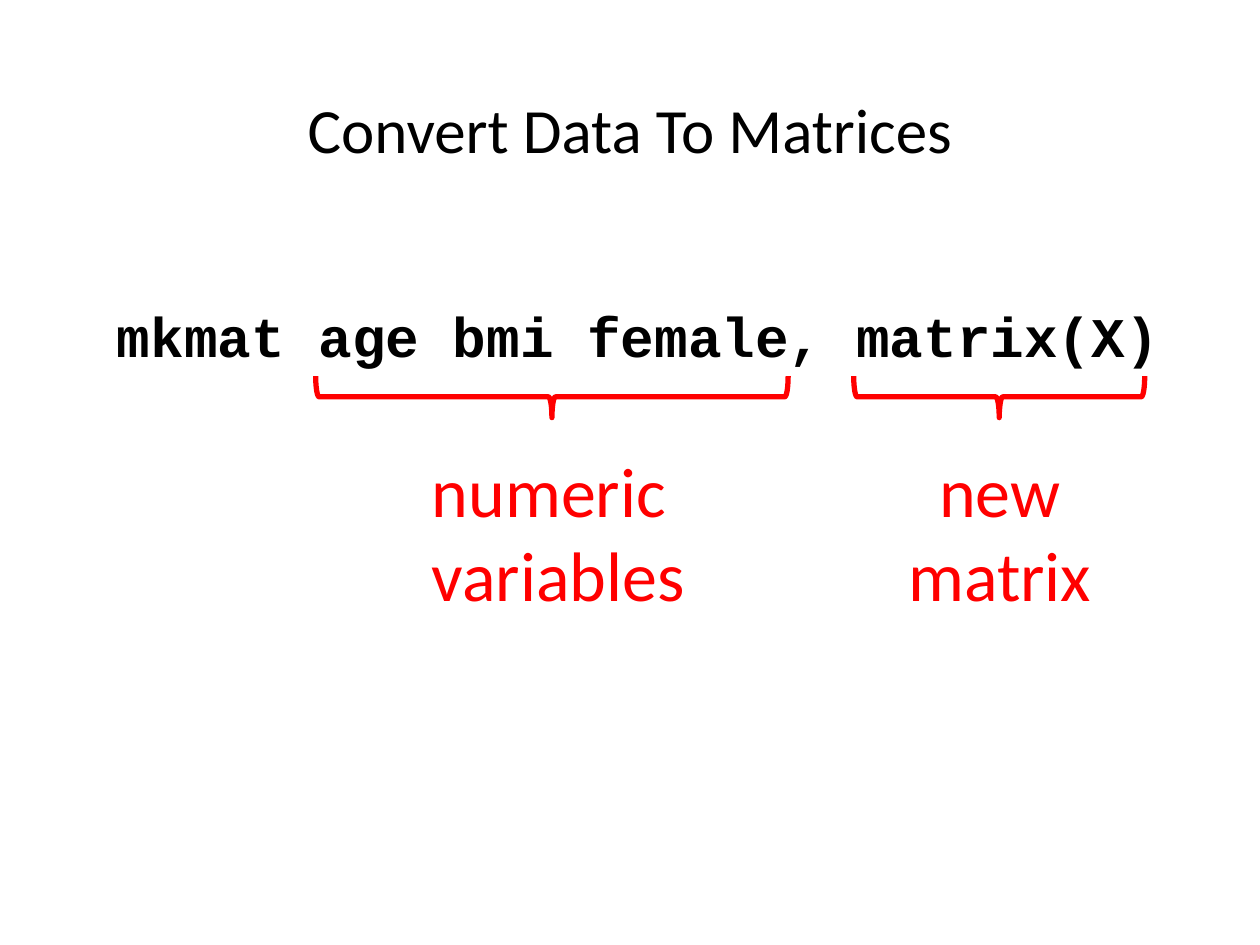
from dataclasses import dataclass

from pptx import Presentation
from pptx.dml.color import RGBColor
from pptx.enum.shapes import MSO_SHAPE
from pptx.enum.text import MSO_ANCHOR, PP_ALIGN
from pptx.slide import Slide
from pptx.text.text import TextFrame
from pptx.util import Inches, Pt


@dataclass(frozen=True)
class Theme:
    ink: RGBColor = RGBColor(0, 0, 0)
    accent: RGBColor = RGBColor(255, 0, 0)
    sans: str = "Calibri"
    mono: str = "Courier New"
    title: Pt = Pt(36)
    code: Pt = Pt(32)
    label: Pt = Pt(40)
    brace: Pt = Pt(3)


@dataclass(frozen=True)
class Box:
    left: float
    top: float
    width: float
    height: float

    def lengths(self) -> list[Inches]:
        return [Inches(v) for v in (self.left, self.top, self.width, self.height)]


@dataclass(frozen=True)
class Callout:
    lines: tuple[str, ...]
    box: Box
    align: PP_ALIGN
    brace_center: float
    brace_span: float


THEME = Theme()
BRACE_MIDDLE = 3.15
BRACE_DEPTH = 0.33
TITLE = {"name": THEME.sans, "size": THEME.title, "bold": False}
CODE = {"name": THEME.mono, "size": THEME.code, "bold": True}
LABEL = {"name": THEME.sans, "size": THEME.label, "bold": False}
CALLOUTS = (
    Callout(("numeric", "variables"), Box(3.33, 3.5, 2.23, 1.45),
            PP_ALIGN.LEFT, 4.38, 3.75),
    Callout(("new", "matrix"), Box(7.1, 3.5, 1.67, 1.45),
            PP_ALIGN.CENTER, 7.93, 2.31),
)


def write(tf: TextFrame, lines: tuple[str, ...], fmt: dict,
          color: RGBColor, align: PP_ALIGN) -> None:
    tf.vertical_anchor = MSO_ANCHOR.TOP
    for i, line in enumerate(lines):
        p = tf.paragraphs[0] if i == 0 else tf.add_paragraph()
        p.alignment = align
        r = p.add_run()
        r.text = line
        for key, value in fmt.items():
            setattr(r.font, key, value)
        r.font.color.rgb = color


def add_title(s: Slide, text: str, box: Box) -> None:
    sp = s.shapes.title
    sp.left, sp.top, sp.width, sp.height = box.lengths()
    write(sp.text_frame, (text,), TITLE, THEME.ink, PP_ALIGN.CENTER)


def add_text(s: Slide, lines: tuple[str, ...], box: Box, fmt: dict,
             color: RGBColor, align: PP_ALIGN) -> None:
    tf = s.shapes.add_textbox(*box.lengths()).text_frame
    tf.word_wrap = False
    write(tf, lines, fmt, color, align)


def add_brace(s: Slide, center: float, span: float) -> None:
    box = Box(center - BRACE_DEPTH / 2, BRACE_MIDDLE - span / 2, BRACE_DEPTH, span)
    sp = s.shapes.add_shape(MSO_SHAPE.RIGHT_BRACE, *box.lengths())
    sp.rotation = 90
    sp.shadow.inherit = False
    sp.fill.background()
    sp.line.color.rgb = THEME.accent
    sp.line.width = THEME.brace


def main() -> None:
    prs = Presentation()
    prs.slide_width, prs.slide_height = Inches(10), Inches(7.5)
    s = prs.slides.add_slide(prs.slide_layouts[5])
    add_title(s, "Convert Data To Matrices", Box(0, 0.67, 10, 0.71))
    for c in CALLOUTS:
        add_text(s, c.lines, c.box, LABEL, THEME.accent, c.align)
        add_brace(s, c.brace_center, c.brace_span)
    add_text(s, ("mkmat age bmi female, matrix(X)",), Box(0.83, 2.34, 8.57, 0.64),
             CODE, THEME.ink, PP_ALIGN.LEFT)
    prs.save("out.pptx")


if __name__ == "__main__":
    main()
